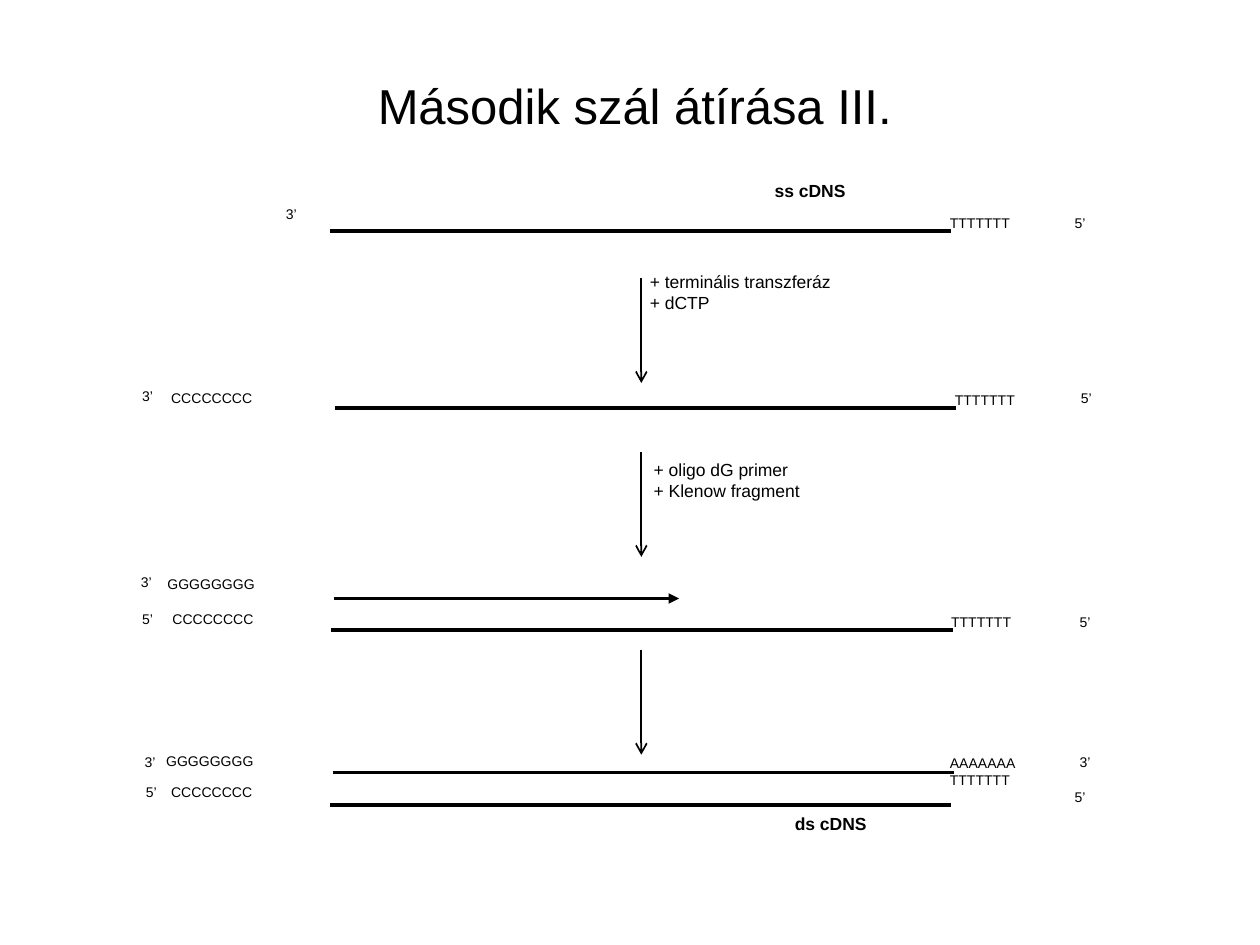
from dataclasses import dataclass

from lxml import etree
from pptx import Presentation
from pptx.dml.color import RGBColor
from pptx.enum.shapes import MSO_CONNECTOR
from pptx.enum.text import MSO_ANCHOR, PP_ALIGN
from pptx.oxml.ns import qn
from pptx.util import Inches, Pt

STRAIGHT = MSO_CONNECTOR.STRAIGHT
LEFT = PP_ALIGN.LEFT
TOP = MSO_ANCHOR.TOP

# Grid: 100 columns by 75 rows on a 10 x 7.5 inch slide
COLUMNS, ROWS = 100, 75
SLIDE_WIDTH, SLIDE_HEIGHT = Inches(10), Inches(7.5)
COLORS = {"ink": "000000"}
FONT = "Arial"

STRAND_LENGTH = 49.3
STEP_COLUMN, STEP_LENGTH = 50.9, 8.3


@dataclass(frozen=True)
class Style:
    size: float
    height: float
    bold: bool = False


@dataclass(frozen=True)
class Label:
    lines: tuple[str, ...]
    col: float
    row: float
    width: float
    style: Style


@dataclass(frozen=True)
class Strand:
    col: float
    row: float
    length: float = STRAND_LENGTH
    head: str = ""


TITLE = Style(28, 5.7)
NAME = Style(10, 4.8, bold=True)
REAGENT = Style(10, 7.8)
SEQUENCE = Style(8, 4.2)
SEQUENCE_PAIR = Style(8, 6.6)

STRANDS = [
    Strand(26.2, 18.35),
    Strand(26.6, 32.4),
    Strand(26.5, 47.5, 27.4, "triangle"),
    Strand(26.3, 50),
    Strand(26.4, 61.3),
    Strand(26.2, 63.9),
]
STEP_ROWS = [22.1, 35.9, 51.6]

CAPTIONS = [
    Label(("Második szál átírása III.",), 29, 5.5, 43.3, TITLE),
    Label(("ss cDNS",), 60.5, 13.8, 13.5, NAME),
    Label(("ds cDNS",), 62.1, 64, 13.6, NAME),
    Label(("+ terminális transzferáz", "+ dCTP"), 50.6, 21, 29, REAGENT),
    Label(("+ oligo dG primer", "+ Klenow fragment"), 50.9, 35.9, 24, REAGENT),
    Label(("AAAAAAA", "TTTTTTT"), 74.4, 59.4, 13.1, SEQUENCE_PAIR),
]

# Sequence tails and strand ends: text -> (box width, (column, row) places)
SEQUENCES = {
    "TTTTTTT": (11.9, [(74.4, 16.5), (74.8, 30.6), (74.5, 48.2)]),
    "CCCCCCCC": (14.8, [(12.6, 30.4), (12.7, 48), (12.6, 61.7)]),
    "GGGGGGGG": (15.8, [(12.3, 45.2), (12.2, 59.2)]),
    "3’": (5.1, [(21.7, 15.8), (10.3, 30.3), (10.2, 45),
                 (10.5, 59.3), (84.7, 59.3)]),
    "5’": (5.1, [(84.3, 16.5), (84.8, 30.4), (84.7, 48.2),
                 (10.3, 48), (10.6, 61.7), (84.3, 62.1)]),
}


def x(columns: float) -> int:
    return round(SLIDE_WIDTH * columns / COLUMNS)


def y(rows: float) -> int:
    return round(SLIDE_HEIGHT * rows / ROWS)


def draw_line(slide, start: tuple[float, float], end: tuple[float, float],
              weight: float, head: str = "") -> None:
    line = slide.shapes.add_connector(
        STRAIGHT, x(start[0]), y(start[1]), x(end[0]), y(end[1]))
    line.line.color.rgb = RGBColor.from_string(COLORS["ink"])
    line.line.width = Pt(weight)
    if head:
        etree.SubElement(line.line._get_or_add_ln(), qn("a:tailEnd"), type=head)
    etree.SubElement(line._element.spPr, qn("a:effectLst"))


def draw_label(slide, label: Label) -> None:
    box = slide.shapes.add_textbox(
        x(label.col), y(label.row), x(label.width), y(label.style.height))
    frame = box.text_frame
    frame.word_wrap = True
    frame.vertical_anchor = TOP
    frame.text = "\n".join(label.lines)
    for paragraph in frame.paragraphs:
        paragraph.alignment = LEFT
        font = paragraph.font
        font.name = FONT
        font.size = Pt(label.style.size)
        font.bold = label.style.bold
        font.color.rgb = RGBColor.from_string(COLORS["ink"])


def main() -> None:
    prs = Presentation()
    prs.slide_width, prs.slide_height = SLIDE_WIDTH, SLIDE_HEIGHT
    slide = prs.slides.add_slide(prs.slide_layouts[6])

    # DNA strands
    for strand in STRANDS:
        draw_line(slide, (strand.col, strand.row),
                  (strand.col + strand.length, strand.row), 2, strand.head)

    # Reaction steps
    for row in STEP_ROWS:
        draw_line(slide, (STEP_COLUMN, row),
                  (STEP_COLUMN, row + STEP_LENGTH), 1, "arrow")

    # Title, names and reagents
    for caption in CAPTIONS:
        draw_label(slide, caption)

    # Sequence tails and strand ends
    for text, (width, places) in SEQUENCES.items():
        for col, row in places:
            draw_label(slide, Label((text,), col, row, width, SEQUENCE))

    prs.save("out.pptx")


if __name__ == "__main__":
    main()
